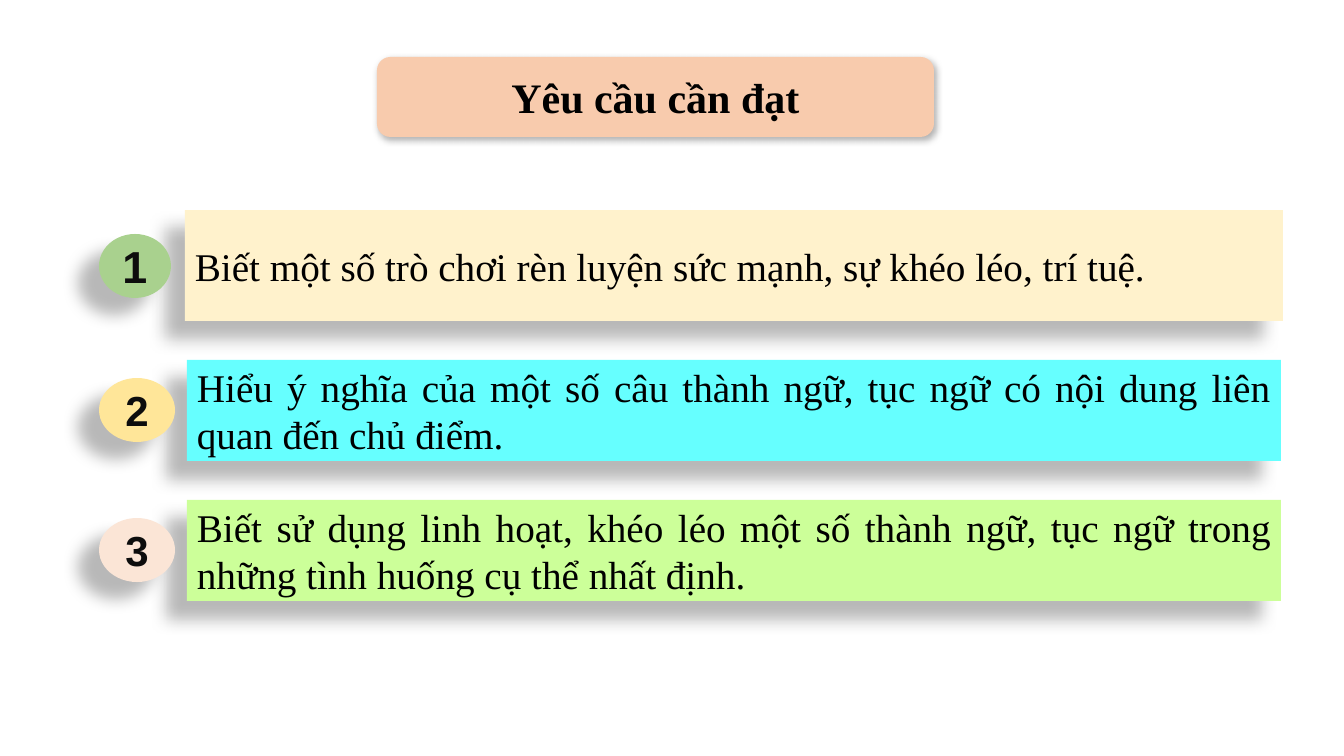
from lxml import etree
from pptx import Presentation
from pptx.dml.color import RGBColor
from pptx.enum.shapes import MSO_SHAPE
from pptx.enum.text import MSO_ANCHOR, PP_ALIGN
from pptx.oxml.ns import qn
from pptx.util import Emu, Pt

ROUNDED, RECTANGLE, OVAL = MSO_SHAPE.ROUNDED_RECTANGLE, MSO_SHAPE.RECTANGLE, MSO_SHAPE.OVAL
MIDDLE = MSO_ANCHOR.MIDDLE
CENTER, JUSTIFY = PP_ALIGN.CENTER, PP_ALIGN.JUSTIFY

PAGE_WIDTH, PAGE_HEIGHT = 1344, 756
SCALE = 12192000 / PAGE_WIDTH

BLACK = RGBColor(0x00, 0x00, 0x00)
INK = RGBColor(0x0D, 0x0D, 0x0D)
PEACH = RGBColor(0xF8, 0xCB, 0xAD)
CREAM = RGBColor(0xFF, 0xF2, 0xCC)
CYAN = RGBColor(0x66, 0xFF, 0xFF)
LIME = RGBColor(0xCC, 0xFF, 0x99)
GREEN = RGBColor(0xA9, 0xD1, 0x8E)
YELLOW = RGBColor(0xFF, 0xE6, 0x99)
PINK = RGBColor(0xFB, 0xE5, 0xD6)

SERIF, SANS = "Times New Roman", "Arial"

# Opacity in percent, blur and distance in points, angle in degrees
TITLE_SHADOW = (30, 4.5, 2.6, 53)
ROW_SHADOW = (28, 11.8, 19.7, 141)

BADGE_LEFT, BADGE_HEIGHT = 99, 64

# Bar position and colour, badge top, width, colour and text size, wording
GOALS = [
    ((185, 210, 1098, 111), CREAM, 234, 72, GREEN, 32,
     "Biết một số trò chơi rèn luyện sức mạnh, sự khéo léo, trí tuệ."),
    ((187, 360, 1094, 101), CYAN, 378, 76, YELLOW, 30,
     "Hiểu ý nghĩa của một số câu thành ngữ, tục ngữ có nội dung liên quan đến chủ điểm."),
    ((187, 500, 1094, 101), LIME, 518, 76, PINK, 30,
     "Biết sử dụng linh hoạt, khéo léo một số thành ngữ, tục ngữ trong những tình huống cụ thể nhất định."),
]


def px(length):
    return Emu(round(length * SCALE))


class GoalPage:
    def __init__(self, page):
        self.page = page

    def cast_shadow(self, shape, shadow):
        opacity, blur, distance, angle = shadow
        shape.shadow.inherit = False
        effects = shape.element.spPr.find(qn("a:effectLst"))
        outer = etree.SubElement(
            effects, qn("a:outerShdw"), blurRad=str(Pt(blur)), dist=str(Pt(distance)),
            dir=str(angle * 60000), algn="ctr", rotWithShape="0")
        color = etree.SubElement(outer, qn("a:srgbClr"), val=str(BLACK))
        etree.SubElement(color, qn("a:alpha"), val=str(opacity * 1000))

    def panel(self, shapes, kind, box, fill, shadow, text, size,
              font=SERIF, color=BLACK, bold=False, align=CENTER):
        """Add a filled, shadowed shape with one paragraph to a shape collection."""
        shape = shapes.add_shape(kind, *map(px, box))
        shape.fill.solid()
        shape.fill.fore_color.rgb = fill
        shape.line.fill.background()
        self.cast_shadow(shape, shadow)
        frame = shape.text_frame
        frame.word_wrap = True
        frame.vertical_anchor = MIDDLE
        para = frame.paragraphs[0]
        para.text = text
        para.alignment = align
        para.font.name = font
        para.font.size = Pt(size)
        para.font.bold = bold
        para.font.color.rgb = color

    def title(self, text):
        self.panel(self.page.shapes, ROUNDED, (377, 57, 557, 80), PEACH,
                   TITLE_SHADOW, text, 30, bold=True)

    def goal(self, number, bar_box, bar_fill, badge_top, badge_width, badge_fill, badge_size, text):
        """Group a wide text bar with its numbered badge."""
        shapes = self.page.shapes.add_group_shape().shapes
        self.panel(shapes, RECTANGLE, bar_box, bar_fill, ROW_SHADOW, text, 28, align=JUSTIFY)
        badge_box = (BADGE_LEFT, badge_top, badge_width, BADGE_HEIGHT)
        self.panel(shapes, OVAL, badge_box, badge_fill, ROW_SHADOW, str(number), badge_size,
                   font=SANS, color=INK, bold=True)


def main():
    deck = Presentation()
    deck.slide_width, deck.slide_height = px(PAGE_WIDTH), px(PAGE_HEIGHT)
    goals = GoalPage(deck.slides.add_slide(deck.slide_layouts[6]))
    goals.title("Yêu cầu cần đạt")
    for number, goal in enumerate(GOALS, start=1):
        goals.goal(number, *goal)
    deck.save("out.pptx")


if __name__ == "__main__":
    main()
